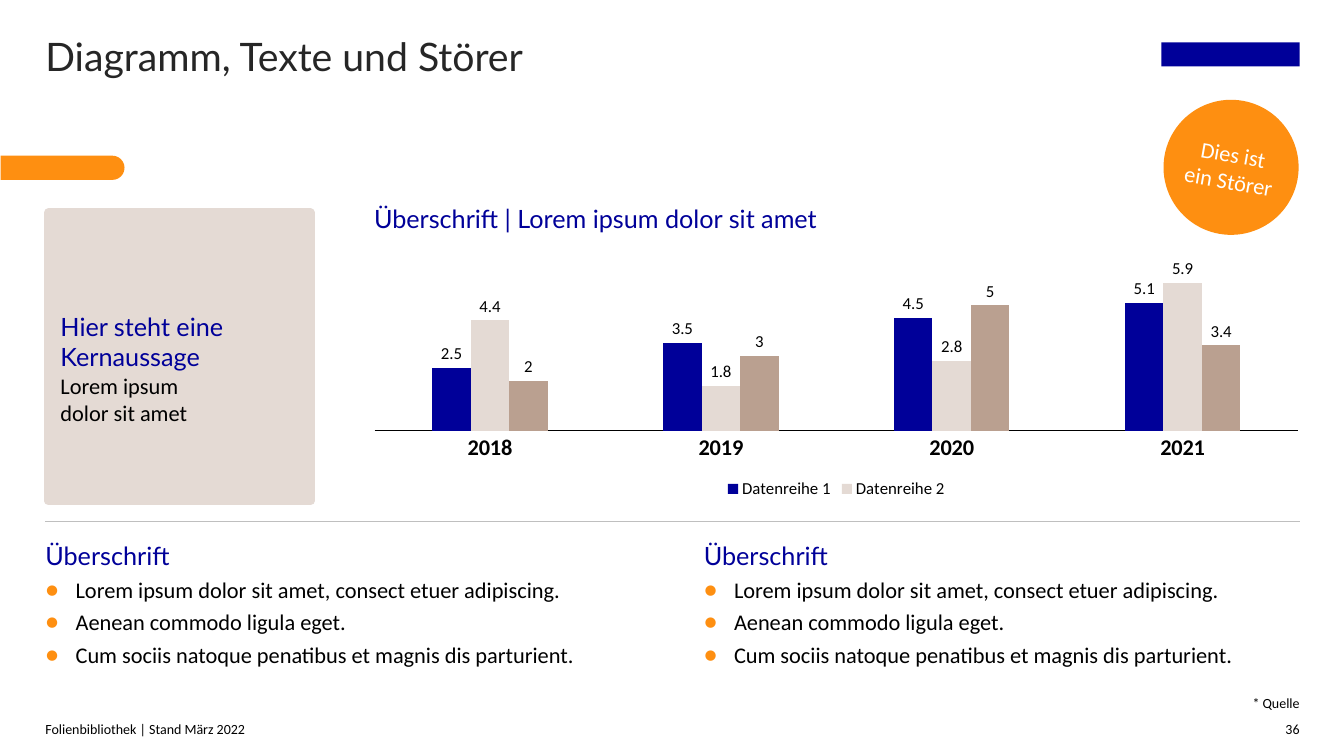
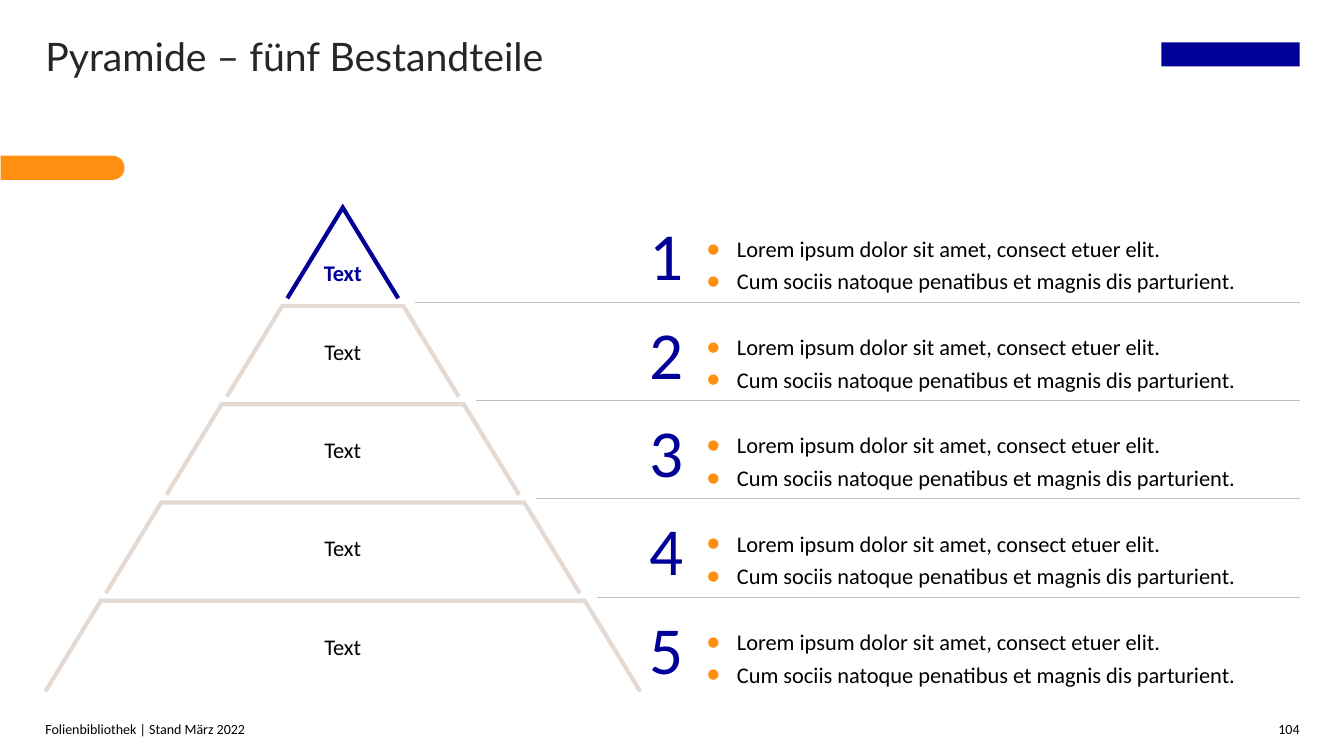
from lxml import etree
from pptx import Presentation
from pptx.chart.data import CategoryChartData
from pptx.dml.color import RGBColor
from pptx.enum.chart import XL_CHART_TYPE, XL_LABEL_POSITION, XL_LEGEND_POSITION, XL_TICK_MARK
from pptx.enum.shapes import MSO_CONNECTOR, MSO_SHAPE
from pptx.enum.text import MSO_ANCHOR, MSO_AUTO_SIZE, PP_ALIGN
from pptx.oxml.ns import qn
from pptx.util import Inches, Pt

TOP, MIDDLE, BOTTOM = MSO_ANCHOR.TOP, MSO_ANCHOR.MIDDLE, MSO_ANCHOR.BOTTOM
LEFT, CENTER, RIGHT = PP_ALIGN.LEFT, PP_ALIGN.CENTER, PP_ALIGN.RIGHT
COLORS = {
    "orange": "FE8F11", "navy": "000099", "sand": "E4DAD4", "taupe": "BAA090",
    "title": "262626", "black": "000000", "white": "FFFFFF", "rule": "BFBFBF",
}
HEAD, BODY = "Lato", "Calibri"
MARGIN, RIGHT_EDGE = 0.45, 12.89


def rgb(name):
    return RGBColor.from_string(COLORS[name])


# Text
def setup_frame(tf, anchor=TOP, insets=(0, 0, 0, 0), wrap=True):
    tf.auto_size = MSO_AUTO_SIZE.NONE
    tf.word_wrap = wrap
    tf.vertical_anchor = anchor
    tf.margin_left, tf.margin_top, tf.margin_right, tf.margin_bottom = map(Inches, insets)
    return tf


def add_run(p, text, size, color="black", font=BODY, bold=False):
    for i, line in enumerate(text.split("\n")):
        if i:
            p.add_line_break()
        r = p.add_run()
        r.text = line
        r.font.size, r.font.name, r.font.bold = Pt(size), font, bold
        r.font.color.rgb = rgb(color)


def next_paragraph(tf, align=LEFT, after=0):
    p = tf.paragraphs[0] if not tf.paragraphs[0].runs else tf.add_paragraph()
    p.alignment = align
    p.space_after = Pt(after)
    return p


def add_text(shapes, box, text, size, color="black", font=BODY, bold=False,
             align=LEFT, anchor=TOP, insets=(0, 0, 0, 0)):
    sp = shapes.add_textbox(*map(Inches, box))
    tf = setup_frame(sp.text_frame, anchor, insets)
    add_run(next_paragraph(tf, align), text, size, color, font, bold)


def add_bullet_box(s, box, bullets, heading=None, anchor=TOP, insets=(0, 0, 0, 0)):
    tf = setup_frame(s.shapes.add_textbox(*map(Inches, box)).text_frame, anchor, insets)
    if heading:
        add_run(next_paragraph(tf, after=4), heading, 18, "navy", HEAD)
    for text in bullets:
        p = next_paragraph(tf, after=4)
        add_run(p, text, 16)
        pPr = p._p.get_or_add_pPr()
        pPr.set("marL", str(Inches(0.3)))
        pPr.set("indent", str(-Inches(0.3)))
        clr = etree.SubElement(pPr, qn("a:buClr"))
        etree.SubElement(clr, qn("a:srgbClr"), val=COLORS["orange"])
        etree.SubElement(pPr, qn("a:buFont"), typeface=BODY)
        etree.SubElement(pPr, qn("a:buChar"), char="●")


# Shapes and lines
def add_shape(s, kind, box, fill):
    sp = s.shapes.add_shape(kind, *map(Inches, box))
    sp.shadow.inherit = False
    sp.fill.solid()
    sp.fill.fore_color.rgb = rgb(fill)
    sp.line.fill.background()
    return sp


def add_rule(s, left, y):
    line = s.shapes.add_connector(MSO_CONNECTOR.STRAIGHT, *map(Inches, (left, y, RIGHT_EDGE, y)))
    line.line.color.rgb = rgb("rule")
    line.line.width = Pt(0.75)
    etree.SubElement(line.element.spPr, qn("a:effectLst"))


def add_outline(shapes, points, color):
    pts = [(Inches(x), Inches(y)) for x, y in points]
    builder = shapes.build_freeform(*pts[0], scale=1.0)
    builder.add_line_segments(pts[1:], close=False)
    sp = builder.convert_to_shape()
    sp.shadow.inherit = False
    sp.fill.background()
    sp.line.color.rgb = rgb(color)
    sp.line.width = Pt(3)
    etree.SubElement(sp.element.spPr.find(qn("a:ln")), qn("a:miter"), lim="800000")


# Frame shared by all slides
def add_slide(prs, title, number):
    s = prs.slides.add_slide(prs.slide_layouts[5])
    tag = add_shape(s, MSO_SHAPE.ROUND_2_SAME_RECTANGLE, (0.5, 1.05, 0.24, 1.23), "orange")
    tag.adjustments[0] = 0.5
    tag.rotation = 90
    add_shape(s, MSO_SHAPE.RECTANGLE, (11.52, 0.42, 1.37, 0.24), "navy")  # logo position

    sp = s.shapes.title
    sp.left, sp.top, sp.width, sp.height = map(Inches, (MARGIN, 0.32, 9.61, 0.55))
    tf = setup_frame(sp.text_frame)
    add_run(next_paragraph(tf), title, 28, "title", HEAD)

    add_text(s.shapes, (MARGIN, 7.16, 11.06, 0.16), "Folienbibliothek | Stand März 2022",
             10, anchor=BOTTOM)
    add_text(s.shapes, (12.58, 7.16, 0.31, 0.16), str(number), 10, align=RIGHT, anchor=BOTTOM)
    return s


# Chart
def add_column_chart(s, box, categories, series):
    data = CategoryChartData()
    data.categories = categories
    for name, values, _ in series:
        data.add_series(name, values)
    chart = s.shapes.add_chart(XL_CHART_TYPE.COLUMN_CLUSTERED, *map(Inches, box), data).chart
    chart.has_title = False
    chart.font.size, chart.font.name = Pt(10), BODY
    chart.font.color.rgb = rgb("black")

    plot = chart.plots[0]
    plot.gap_width, plot.overlap, plot.vary_by_categories = 300, 0, False
    for ser, (_, _, color) in zip(plot.series, series):
        ser.format.fill.solid()
        ser.format.fill.fore_color.rgb = rgb(color)
        labels = ser.data_labels
        labels.show_value = True
        labels.position = XL_LABEL_POSITION.OUTSIDE_END
        labels.font.size = Pt(12)

    values = chart.value_axis
    values.minimum_scale, values.maximum_scale = 0, 7
    values.has_major_gridlines = values.visible = False
    cats = chart.category_axis
    cats.major_tick_mark = XL_TICK_MARK.NONE
    cats.tick_labels.font.size, cats.tick_labels.font.bold = Pt(16), True
    cats.format.line.color.rgb = rgb("black")
    cats.format.line.width = Pt(0.75)

    chart.has_legend = True
    legend = chart.legend
    legend.position = XL_LEGEND_POSITION.BOTTOM
    legend.include_in_layout = False
    legend.font.size = Pt(12)
    # The legend leaves out the last series
    entry = etree.Element(qn("c:legendEntry"))
    etree.SubElement(entry, qn("c:idx"), val=str(len(series) - 1))
    etree.SubElement(entry, qn("c:delete"), val="1")
    legend._element.find(qn("c:legendPos")).addnext(entry)

    # Fixed inner plot area
    area = chart._chartSpace.chart.plotArea
    for old in area.findall(qn("c:layout")):
        area.remove(old)
    layout = etree.Element(qn("c:layout"))
    manual = etree.SubElement(layout, qn("c:manualLayout"))
    for key, val in (("layoutTarget", "inner"), ("xMode", "edge"), ("yMode", "edge"),
                     ("x", "0"), ("y", "0"), ("w", "1"), ("h", "0.71")):
        etree.SubElement(manual, qn("c:" + key), val=val)
    area.insert(0, layout)


def build_chart_slide(prs):
    s = add_slide(prs, "Diagramm, Texte und Störer", 36)
    add_column_chart(s, (3.71, 2.53, 9.17, 2.46), ["2018", "2019", "2020", "2021"], [
        ("Datenreihe 1", (2.5, 3.5, 4.5, 5.1), "navy"),
        ("Datenreihe 2", (4.4, 1.8, 2.8, 5.9), "sand"),
        ("Datenreihe 3", (2, 3, 5, 3.4), "taupe"),
    ])
    add_text(s.shapes, (3.71, 2.02, 9.17, 0.35), "Überschrift | Lorem ipsum dolor sit amet",
             18, "navy", HEAD)

    # Key message
    card = add_shape(s, MSO_SHAPE.RECTANGLE, (0.48, 2.11, 2.6, 2.86), "sand")
    card.line.color.rgb = rgb("sand")
    card.line.width = Pt(6)
    p = next_paragraph(setup_frame(card.text_frame, insets=(0.12, 0.98, 0.12, 0.12)))
    add_run(p, "Hier steht eine Kernaussage", 18, "navy", HEAD)
    p.add_line_break()
    add_run(p, "Lorem ipsum\ndolor sit amet", 16)

    # Two text columns
    add_rule(s, MARGIN, 5.17)
    bullets = ["Lorem ipsum dolor sit amet, consect etuer adipiscing.",
               "Aenean commodo ligula eget.",
               "Cum sociis natoque penatibus et magnis dis parturient."]
    for left in (MARGIN, 6.98):
        add_bullet_box(s, (left, 5.36, 5.91, 1.5), bullets, "Überschrift")

    # Round badge and source note
    badge = add_shape(s, MSO_SHAPE.OVAL, (11.54, 0.99, 1.34, 1.34), "orange")
    badge.rotation = 10
    tf = setup_frame(badge.text_frame, MIDDLE, wrap=False)
    add_run(next_paragraph(tf, CENTER), "Dies ist\nein Störer", 16, "white")
    add_text(s.shapes, (1.35, 6.86, 11.54, 0.2), "* Quelle", 10, align=RIGHT, anchor=BOTTOM)


def build_pyramid_slide(prs):
    s = add_slide(prs, "Pyramide – fünf Bestandteile", 104)
    levels, first_bottom, last_bottom = 5, 3, 6.9
    pitch = (last_bottom - first_bottom) / (levels - 1)
    center, step, flare, height = 3.4, 0.6, 0.55, 0.9
    bullets = ["Lorem ipsum dolor sit amet, consect etuer elit.",
               "Cum sociis natoque penatibus et magnis dis parturient."]
    pyramid = s.shapes.add_group_shape().shapes

    for i in range(levels):
        # Numbered row with a rule below all but the last
        bottom = first_bottom + i * pitch
        row = {"anchor": BOTTOM, "insets": (0, 0, 0, 0.08)}
        add_bullet_box(s, (7.01, bottom - pitch, 5.87, pitch), bullets, **row)
        add_text(s.shapes, (6.39, bottom - pitch, 0.39, pitch), str(i + 1), 48, "navy",
                 align=RIGHT, **row)
        if i < levels - 1:
            add_rule(s, 4.12 + i * step, bottom)

        # Pyramid level: the tip, then wider and wider trapezoids
        top, half = 2.06 + i * pitch, i * step
        base = half + flare
        roof = [(center - half, top), (center + half, top)] if i else [(center, top)]
        outline = [(center - base, top + height), *roof, (center + base, top + height)]
        add_outline(pyramid, outline, "sand" if i else "navy")
        drop = 0 if i else 0.39
        width = 2 * (half or flare)
        add_text(pyramid, (center - width / 2, top + drop, width, height - drop), "Text", 16,
                 "black" if i else "navy", bold=not i, align=CENTER, anchor=MIDDLE)


def main():
    prs = Presentation()
    prs.slide_width, prs.slide_height = Inches(13.33), Inches(7.5)
    build_chart_slide(prs)
    build_pyramid_slide(prs)
    prs.save("out.pptx")


if __name__ == "__main__":
    main()
